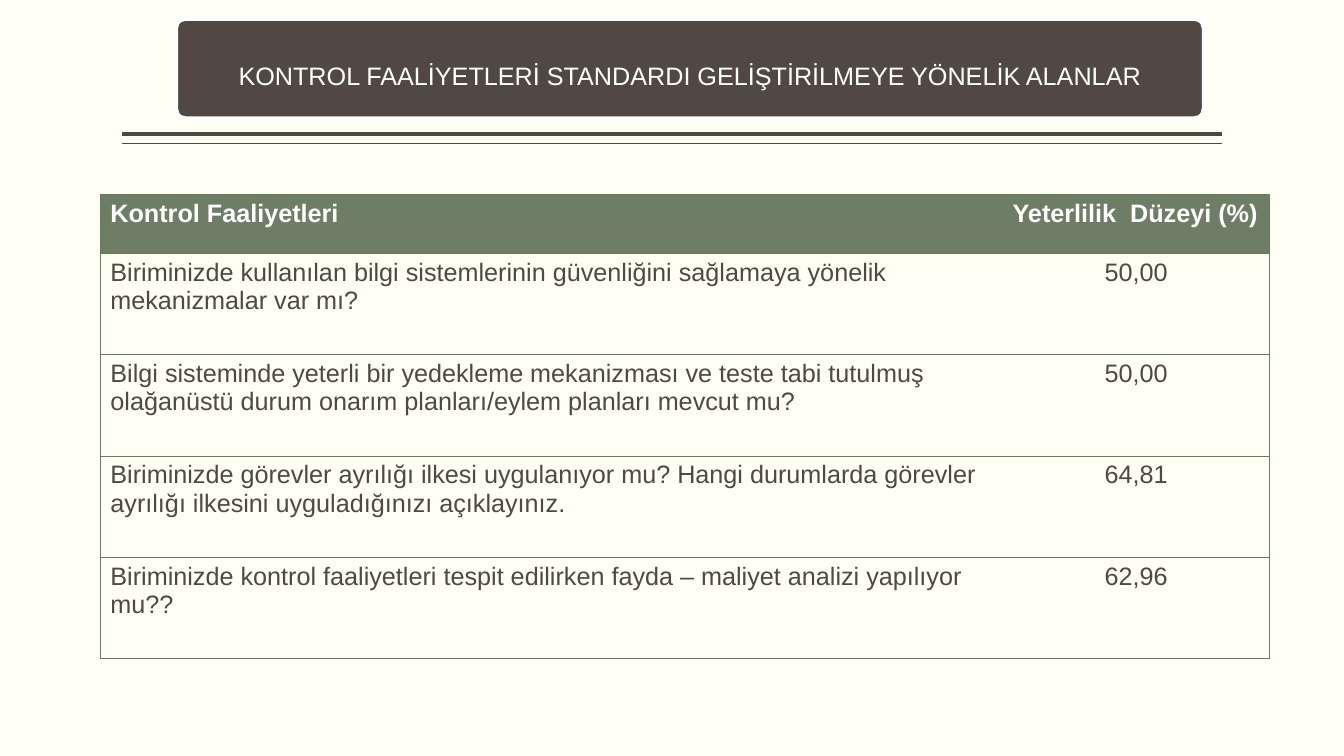
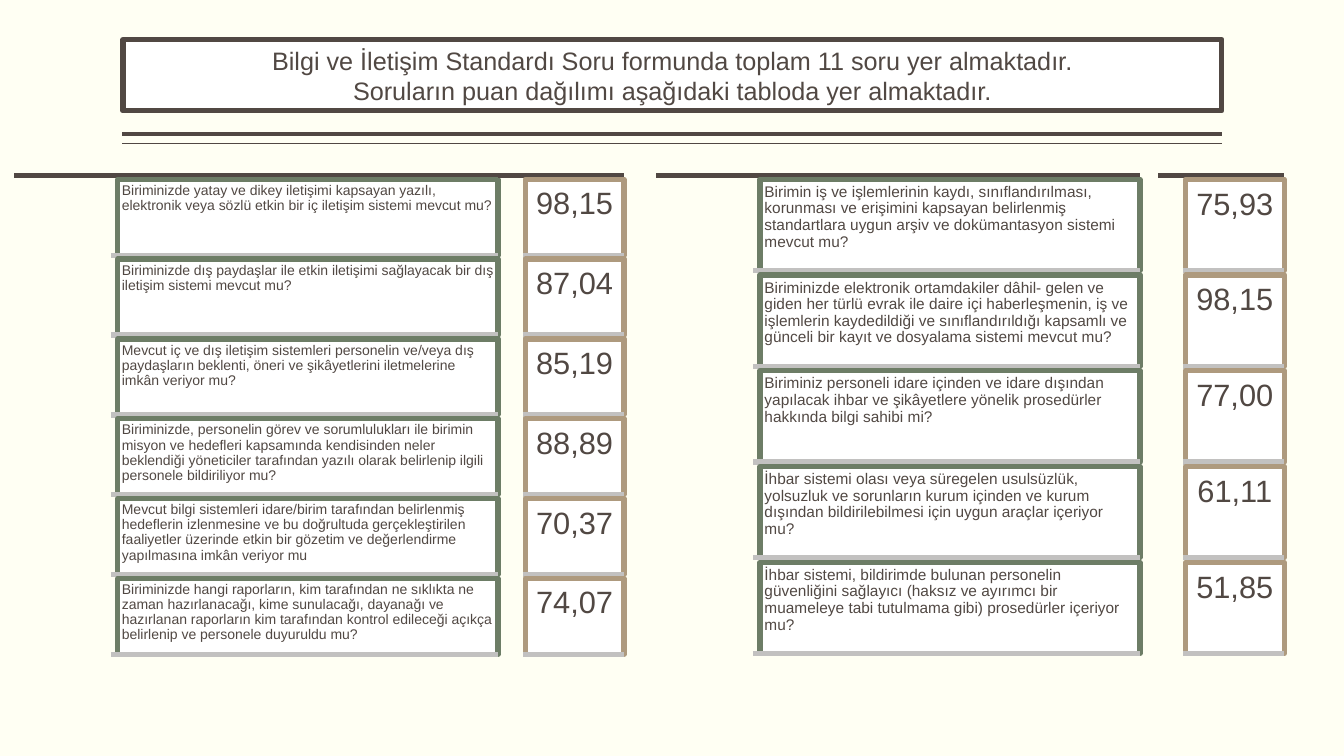
from lxml.etree import SubElement
from pptx import Presentation
from pptx.dml.color import RGBColor
from pptx.enum.shapes import MSO_CONNECTOR as CONN, MSO_SHAPE as SHAPE
from pptx.enum.text import MSO_ANCHOR as ANCHOR, PP_ALIGN as ALIGN
from pptx.oxml import parse_xml
from pptx.oxml.ns import nsdecls, qn
from pptx.util import Pt

CREAM = RGBColor(0xFF, 0xFF, 0xF3)
WHITE = RGBColor(0xFF, 0xFF, 0xFF)
BROWN = RGBColor(0x51, 0x48, 0x43)
GREEN = RGBColor(0x6D, 0x7D, 0x66)
BORDER = RGBColor(0x6A, 0x7B, 0x63)
TAN = RGBColor(0xAE, 0x9A, 0x7E)
GREY = RGBColor(0xC2, 0xC1, 0xC0)
FONT = "Arial"
THICK = 3.78


def write(tf, text, size=18, color=BROWN, bold=False, align=ALIGN.LEFT,
          anchor=ANCHOR.TOP, inset=None, spacing=None):
    """Fill a text frame, one paragraph for each line of text."""
    tf.word_wrap = True
    tf.vertical_anchor = anchor
    if inset is not None:
        tf.margin_left = tf.margin_right = Pt(inset)
        tf.margin_top = tf.margin_bottom = Pt(inset)
    for i, line in enumerate(text.split("\n")):
        p = tf.add_paragraph() if i else tf.paragraphs[0]
        p.alignment = align
        if spacing:
            p.line_spacing = spacing
        r = p.add_run()
        r.text = line
        r.font.name, r.font.size, r.font.bold = FONT, Pt(size), bold
        r.font.color.rgb = color


def draw(s, kind, x, y, w, h, line, width=THICK, fill=WHITE):
    """Add a box, or a horizontal line if kind is CONN.STRAIGHT."""
    if kind is CONN.STRAIGHT:
        sp = s.shapes.add_connector(kind, Pt(x), Pt(y), Pt(x + w), Pt(y + h))
        SubElement(sp.element.spPr, qn("a:effectLst"))
    else:
        sp = s.shapes.add_shape(kind, Pt(x), Pt(y), Pt(w), Pt(h))
        sp.shadow.inherit = False
        sp.fill.solid()
        sp.fill.fore_color.rgb = fill
    sp.line.color.rgb = line
    sp.line.width = Pt(width)
    if kind is CONN.STRAIGHT:
        # effects must follow the line in the shape properties
        sp.element.spPr.append(sp.element.spPr.find(qn("a:effectLst")))
    return sp


prs = Presentation()
prs.slide_width, prs.slide_height = Pt(960), Pt(540)
blank = prs.slide_layouts[6]

# Slide 1: areas to improve
s = prs.slides.add_slide(blank)

# The background and the double rule belong to the master
master = prs.slide_master
master.background.fill.solid()
master.background.fill.fore_color.rgb = CREAM
for shape_id, y, width in ((21, 95.7, 3), (22, 102.6, 1)):
    rule = draw(s, CONN.STRAIGHT, 87.2, y, 786, 0, BROWN, width).element
    rule.nvCxnSpPr.cNvPr.id = shape_id
    master.element.cSld.spTree.append(rule)

banner = draw(s, SHAPE.ROUNDED_RECTANGLE, 125.3, 13, 735, 72, WHITE, fill=BROWN)
banner.adjustments[0] = 0.1
title = s.shapes.add_textbox(Pt(133.2), Pt(21.6), Pt(719.3), Pt(67.7))
write(title.text_frame,
      "KONTROL FAALİYETLERİ STANDARDI GELİŞTİRİLMEYE YÖNELİK ALANLAR",
      color=WHITE, align=ALIGN.CENTER, anchor=ANCHOR.MIDDLE, inset=5, spacing=0.9)

ROWS = [
    ("Kontrol Faaliyetleri", "Yeterlilik  Düzeyi (%)"),
    ("Biriminizde kullanılan bilgi sistemlerinin güvenliğini sağlamaya yönelik "
     "mekanizmalar var mı?", "50,00"),
    ("Bilgi sisteminde yeterli bir yedekleme mekanizması ve teste tabi tutulmuş "
     "olağanüstü durum onarım planları/eylem planları mevcut mu?", "50,00"),
    ("Biriminizde görevler ayrılığı ilkesi uygulanıyor mu? Hangi durumlarda görevler "
     "ayrılığı ilkesini uyguladığınızı açıklayınız.", "64,81"),
    ("Biriminizde kontrol faaliyetleri tespit edilirken fayda – maliyet analizi "
     "yapılıyor mu??", "62,96"),
]
HEAD_H, ROW_H = 42, 72.4
COL_W = (644.4, 190.8)
table = s.shapes.add_table(len(ROWS), 2, Pt(71.7), Pt(139), Pt(sum(COL_W)),
                           Pt(HEAD_H + 4 * ROW_H)).table
table.horz_banding = False
for col, w in zip(table.columns, COL_W):
    col.width = Pt(w)
for i, texts in enumerate(ROWS):
    head = i == 0
    table.rows[i].height = Pt(HEAD_H if head else ROW_H)
    for j, text in enumerate(texts):
        cell = table.cell(i, j)
        write(cell.text_frame, text, color=WHITE if head else BROWN, bold=head,
              align=ALIGN.CENTER if j and not head else ALIGN.LEFT)
        if head:
            cell.fill.solid()
            cell.fill.fore_color.rgb = GREEN
        else:
            cell.fill.background()
        tc_pr = cell._tc.get_or_add_tcPr()
        inner = "R" if j == 0 else "L"
        for k, side in enumerate("LRTB"):
            paint = ("<a:noFill/>" if side == inner else
                     f'<a:solidFill><a:srgbClr val="{BORDER}"/></a:solidFill>')
            tc_pr.insert(k, parse_xml(
                f'<a:ln{side} {nsdecls("a")} w="{Pt(0.5)}">{paint}</a:ln{side}>'))

# Slide 2: questions and their scores
s = prs.slides.add_slide(blank)
box = draw(s, SHAPE.RECTANGLE, 87.8, 28.2, 785, 51, BROWN)
write(box.text_frame,
      "Bilgi ve İletişim Standardı Soru formunda toplam 11 soru yer almaktadır.\n"
      "Soruların puan dağılımı aşağıdaki tabloda yer almaktadır.",
      align=ALIGN.CENTER, anchor=ANCHOR.MIDDLE)

LEFT = [
    ("Biriminizde yatay ve dikey iletişimi kapsayan yazılı, elektronik veya sözlü "
     "etkin bir iç iletişim sistemi mevcut mu?", "98,15"),
    ("Biriminizde dış paydaşlar ile etkin iletişimi sağlayacak bir dış iletişim "
     "sistemi mevcut mu?", "87,04"),
    ("Mevcut iç ve dış iletişim sistemleri personelin ve/veya dış paydaşların "
     "beklenti, öneri ve şikâyetlerini iletmelerine imkân veriyor mu?", "85,19"),
    ("Biriminizde, personelin görev ve sorumlulukları ile birimin misyon ve hedefleri "
     "kapsamında kendisinden neler beklendiği yöneticiler tarafından yazılı olarak "
     "belirlenip ilgili personele bildiriliyor mu?", "88,89"),
    ("Mevcut bilgi sistemleri idare/birim tarafından belirlenmiş hedeflerin "
     "izlenmesine ve bu doğrultuda gerçekleştirilen faaliyetler üzerinde etkin bir "
     "gözetim ve değerlendirme yapılmasına imkân veriyor mu", "70,37"),
    ("Biriminizde hangi raporların, kim tarafından ne sıklıkta ne zaman "
     "hazırlanacağı, kime sunulacağı, dayanağı ve hazırlanan raporların kim "
     "tarafından kontrol edileceği açıkça belirlenip ve personele duyuruldu mu?",
     "74,07"),
]
RIGHT = [
    ("Birimin iş ve işlemlerinin kaydı, sınıflandırılması, korunması ve erişimini "
     "kapsayan belirlenmiş standartlara uygun arşiv ve dokümantasyon sistemi mevcut "
     "mu?", "75,93"),
    ("Biriminizde elektronik ortamdakiler dâhil- gelen ve giden her türlü evrak ile "
     "daire içi haberleşmenin, iş ve işlemlerin kaydedildiği ve sınıflandırıldığı "
     "kapsamlı ve günceli bir kayıt ve dosyalama sistemi mevcut mu?", "98,15"),
    ("Biriminiz personeli idare içinden ve idare dışından yapılacak ihbar ve "
     "şikâyetlere yönelik prosedürler hakkında bilgi sahibi mi?", "77,00"),
    ("İhbar sistemi olası veya süregelen usulsüzlük, yolsuzluk ve sorunların kurum "
     "içinden ve kurum dışından bildirilebilmesi için uygun araçlar içeriyor mu?",
     "61,11"),
    ("İhbar sistemi, bildirimde bulunan personelin güvenliğini sağlayıcı (haksız ve "
     "ayırımcı bir muameleye tabi tutulmama gibi) prosedürler içeriyor mu?", "51,85"),
]
LIST_TOP, BOX_TOP, LIST_H = 125.3, 128.1, 342
BOX_SHARE = 0.952
# Widths of the top line, the boxes and the grey lines; all end at the right edge
QUESTION = dict(top_w=345.6, box_w=271.5, base_w=276.5, color=GREEN)
SCORE = dict(top_w=90, box_w=70.6, base_w=72, color=TAN)
QUESTION_10 = dict(size=10, inset=2.9)
QUESTION_11 = dict(size=11, inset=3.3)
SCORE_22 = dict(size=22, inset=6.5, align=ALIGN.CENTER)

for items, part, right, look, style in (
        (LEFT, 0, 355.7, QUESTION, QUESTION_10),
        (LEFT, 1, 445.7, SCORE, SCORE_22),
        (RIGHT, 0, 814.3, QUESTION, QUESTION_11),
        (RIGHT, 1, 917.3, SCORE, SCORE_22)):
    pitch = LIST_H / len(items)
    box_h = pitch * BOX_SHARE
    draw(s, CONN.STRAIGHT, right - look["top_w"], LIST_TOP, look["top_w"], 0, BROWN)
    for i, item in enumerate(items):
        y = BOX_TOP + i * pitch
        box = draw(s, SHAPE.RECTANGLE, right - look["box_w"], y, look["box_w"], box_h,
                   look["color"])
        write(box.text_frame, item[part], spacing=0.9, **style)
        draw(s, CONN.STRAIGHT, right - look["base_w"], y + box_h, look["base_w"], 0, GREY)

prs.save("out.pptx")
